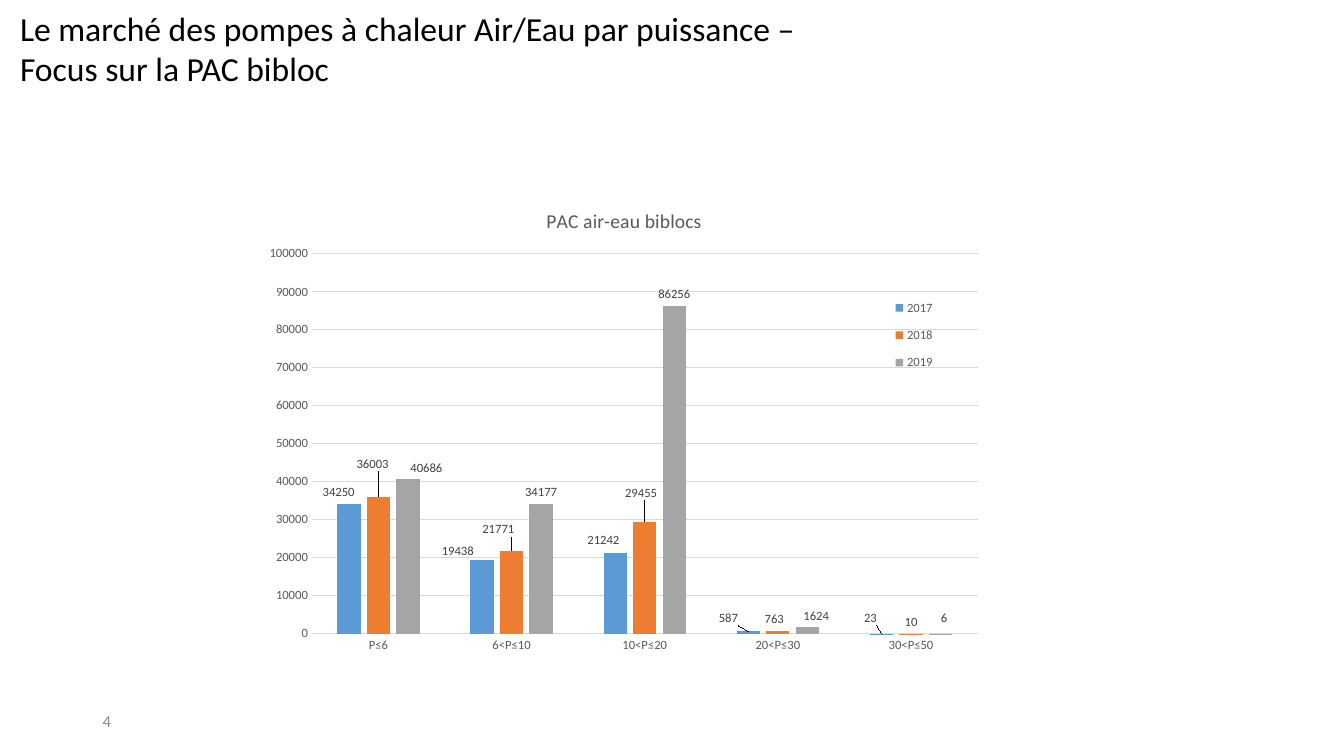
from lxml import etree
from pptx import Presentation
from pptx.chart.data import CategoryChartData
from pptx.dml.color import RGBColor
from pptx.enum.chart import XL_CHART_TYPE, XL_LABEL_POSITION, XL_LEGEND_POSITION, XL_TICK_MARK
from pptx.enum.text import MSO_ANCHOR
from pptx.oxml.ns import qn
from pptx.util import Inches, Pt

COLUMNS = XL_CHART_TYPE.COLUMN_CLUSTERED
OUTSIDE = XL_LABEL_POSITION.OUTSIDE_END
RIGHT = XL_LEGEND_POSITION.RIGHT
NO_TICK = XL_TICK_MARK.NONE
TOP, MIDDLE = MSO_ANCHOR.TOP, MSO_ANCHOR.MIDDLE

FONT = "Calibri"
COLORS = {
    "title": "000000", "number": "8C8C8C", "axis": "595959", "label": "404040", "grid": "D9D9D9",
    "2017": "5B9BD5", "2018": "ED7D31", "2019": "A5A5A5",
}
CHART_W, CHART_H = 7.32, 4.7
POWER_BANDS = ["P≤6", "6<P≤10", "10<P≤20", "20<P≤30", "30<P≤50"]
SALES = {
    "2017": [34250, 19438, 21242, 587, 23],
    "2018": [36003, 21771, 29455, 763, 10],
    "2019": [40686, 34177, 86256, 1624, 6],
}
LABEL_SHIFTS = {
    "2017": {0: (-0.1, 0), 1: (-0.24, 0.03), 2: (-0.12, -0.01), 3: (-0.2, -0.02), 4: (-0.11, -0.04)},
    "2018": {0: (-0.06, -0.21), 1: (-0.13, -0.1), 2: (-0.04, -0.17), 3: (-0.04, 0)},
    "2019": {0: (0.18, 0), 3: (0.09, 0), 4: (0.04, -0.04)},
}


def manual_layout(**settings):
    layout = etree.Element(qn("c:layout"))
    manual = etree.SubElement(layout, qn("c:manualLayout"))
    for name, value in settings.items():
        etree.SubElement(manual, qn("c:" + name)).set("val", str(value))
    return layout


class SlideBuilder:
    def __init__(self, slide):
        self.slide = slide

    def color(self, name):
        return RGBColor.from_string(COLORS[name])

    def font(self, font, size, color):
        font.name = FONT
        font.size = Pt(size)
        font.bold = False
        font.color.rgb = self.color(color)

    def line(self, line, color):
        line.width = Pt(0.75)
        line.color.rgb = self.color(color)

    def text(self, box, text, size, color, anchor=TOP):
        tf = self.slide.shapes.add_textbox(*map(Inches, box)).text_frame
        tf.word_wrap = True
        tf.vertical_anchor = anchor
        r = tf.paragraphs[0].add_run()
        r.text = text
        self.font(r.font, size, color)

    def column_chart(self, box, title, categories, values):
        data = CategoryChartData()
        data.categories = categories
        for name, numbers in values.items():
            data.add_series(name, numbers)
        chart = self.slide.shapes.add_chart(COLUMNS, *map(Inches, box), data).chart
        self.font(chart.font, 10, "title")
        chart.has_title = True
        r = chart.chart_title.text_frame.paragraphs[0].add_run()
        r.text = title
        self.font(r.font, 14, "axis")
        plot = chart.plots[0]
        plot.gap_width, plot.overlap = 219, -27
        plot.vary_by_categories = False
        for series in plot.series:
            self.series(series)
        self.axes(chart)
        self.legend(chart)
        area = chart._chartSpace.chart.plotArea
        for old in area.findall(qn("c:layout")):
            area.remove(old)
        area.insert(0, manual_layout(layoutTarget="inner", xMode="edge", yMode="edge",
                                     x=0.077, y=0.138, w=0.902, h=0.802))

    def series(self, series):
        series.format.fill.solid()
        series.format.fill.fore_color.rgb = self.color(series.name)
        labels = series.data_labels
        labels.show_value = True
        labels.position = OUTSIDE
        self.font(labels.font, 9, "label")
        shifts = LABEL_SHIFTS[series.name]
        for index in shifts:
            label = series.points[index].data_label
            self.font(label.font, 9, "label")
            label.position = OUTSIDE
        for element, (dx, dy) in zip(series._element.xpath(".//c:dLbl"), shifts.values()):
            element.insert(1, manual_layout(x=round(dx / CHART_W, 3), y=round(dy / CHART_H, 3)))

    def axes(self, chart):
        for axis in (chart.category_axis, chart.value_axis):
            axis.major_tick_mark = axis.minor_tick_mark = NO_TICK
            self.font(axis.tick_labels.font, 9, "axis")
        self.line(chart.category_axis.format.line, "grid")
        values = chart.value_axis
        values.minimum_scale, values.maximum_scale, values.major_unit = 0, 100000, 10000
        values.format.line.fill.background()
        values.has_major_gridlines = True
        self.line(values.major_gridlines.format.line, "grid")

    def legend(self, chart):
        chart.has_legend = True
        legend = chart.legend
        legend.position = RIGHT
        legend.include_in_layout = True
        self.font(legend.font, 9, "axis")
        element = legend._element
        for old in element.findall(qn("c:layout")):
            element.remove(old)
        element.find(qn("c:legendPos")).addnext(
            manual_layout(xMode="edge", yMode="edge", x=0.858, y=0.21, w=0.07, h=0.2))


def main():
    prs = Presentation()
    prs.slide_width, prs.slide_height = Inches(13.33), Inches(7.5)
    s = SlideBuilder(prs.slides.add_slide(prs.slide_layouts[6]))
    s.text((0.92, 6.95, 3, 0.4), "4", 12, "number", MIDDLE)
    s.text((0.1, 0.03, 8.55, 0.91),
           "Le marché des pompes à chaleur Air/Eau par puissance – Focus sur la PAC bibloc", 24, "title")
    s.column_chart((2.53, 1.87, CHART_W, CHART_H), "PAC air-eau biblocs", POWER_BANDS, SALES)
    prs.save("out.pptx")


if __name__ == "__main__":
    main()
